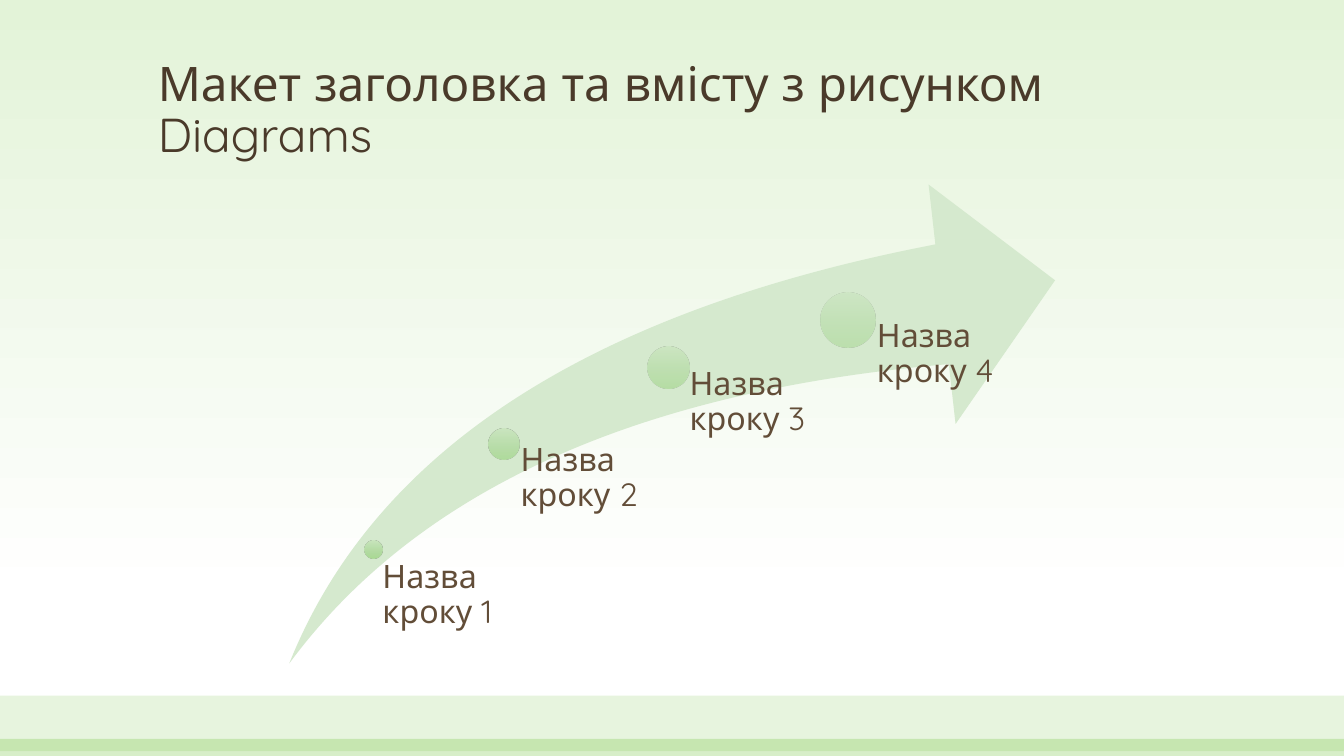
"""Builds a title slide body with a rising arrow that carries four steps."""
import pptx
import pptx.dml.color
import pptx.enum.shapes
import pptx.enum.text
import pptx.oxml.ns
import pptx.util
from dataclasses import dataclass
from lxml import etree

Cm = pptx.util.Cm
RGB = pptx.dml.color.RGBColor.from_string
PRESET = pptx.enum.shapes.MSO_SHAPE
ANCHOR = pptx.enum.text.MSO_ANCHOR
qn = pptx.oxml.ns.qn


@dataclass(frozen=True)
class Theme:
    font: str = "Quicksand"
    title_size: int = 34
    step_size: int = 23
    title_color: str = "4A3A2A"
    step_color: str = "624D38"
    arrow: str = "D5E9CE"
    band: str = "72C23C"
    sky: tuple = ((0, "E3F3D8", 56), (79, "FFFFFF", 100))
    dot: tuple = ((0, "C8E5BC"), (50, "B3DBA2"), (100, "A4D78D"))


theme = Theme()


def paint_gradient(owner, fill, stops):
    fill.gradient()
    fill.gradient_angle = 270
    stop_list = owner.element.find(".//" + qn("a:gsLst"))
    for old_stop in list(stop_list):
        stop_list.remove(old_stop)
    for position, color, opacity in stops:
        stop = etree.SubElement(stop_list, qn("a:gs"), pos=str(position * 1000))
        tint = etree.SubElement(stop, qn("a:srgbClr"), val=color)
        etree.SubElement(tint, qn("a:alpha"), val=str(opacity * 1000))


def add_text(text, *, left, top, width, height, size, color,
             insets=(0, 0, 0, 0), anchor=ANCHOR.TOP):
    frame = slide.shapes.add_textbox(Cm(left), Cm(top), Cm(width), Cm(height)).text_frame
    frame.word_wrap = True
    frame.vertical_anchor = anchor
    frame.margin_left, frame.margin_top, frame.margin_right, frame.margin_bottom = map(Cm, insets)
    paragraph = frame.paragraphs[0]
    paragraph.line_spacing = 0.9
    run = paragraph.add_run()
    run.text = text
    run.font.name = theme.font
    run.font.size = pptx.util.Pt(size)
    run.font.color.rgb = RGB(color)


deck = pptx.Presentation()
deck.slide_width, deck.slide_height = Cm(33.87), Cm(19.05)
slide = deck.slides.add_slide(deck.slide_layouts[6])
paint_gradient(slide, slide.background.fill, theme.sky)

for top, height, opacity in ((17.53, 1.4, 17), (18.62, 0.43, 28)):
    band = slide.shapes.add_shape(PRESET.RECTANGLE, 0, Cm(top), deck.slide_width, Cm(height))
    band.shadow.inherit = False
    band.line.fill.background()
    band.fill.solid()
    band.fill.fore_color.rgb = RGB(theme.band)
    band_color = band.element.spPr.find(qn("a:solidFill"))[0]
    etree.SubElement(band_color, qn("a:alpha"), val=str(opacity * 1000))

add_text("Макет заголовка та вмісту з рисунком Diagrams",
         left=3.73, top=1.22, width=26.42, height=3.02,
         size=theme.title_size, color=theme.title_color,
         insets=(0.25, 0.13, 0.25, 0.13), anchor=ANCHOR.BOTTOM)

arrow = slide.shapes.add_shape(PRESET.SWOOSH_ARROW, Cm(7.29), Cm(4.65), Cm(19.3), Cm(12.07))
arrow.adjustments[0] = 0.25
arrow.adjustments[1] = 0.25
arrow.shadow.inherit = False
arrow.line.fill.background()
arrow.fill.solid()
arrow.fill.fore_color.rgb = RGB(theme.arrow)

steps = (
    (9.41, 13.85, 0.44, 90, 14.14, 3.3, 0.23),
    (12.71, 11.19, 0.78, 77, 11.19, 4.06, 0.41),
    (16.85, 9.26, 1.04, 63, 9.26, 4.06, 0.53),
    (21.36, 8.06, 1.38, 50, 8.06, 4.06, 0.74),
)
steps_bottom = 16.72
for number, (x, y, diameter, opacity, label_top, label_width, indent) in enumerate(steps, 1):
    dot = slide.shapes.add_shape(PRESET.OVAL, Cm(x - diameter / 2), Cm(y - diameter / 2),
                                 Cm(diameter), Cm(diameter))
    dot.shadow.inherit = False
    dot.line.fill.background()
    paint_gradient(dot, dot.fill, [(position, color, opacity) for position, color in theme.dot])
    add_text(f"Назва кроку {number}", left=x, top=label_top, width=label_width,
             height=steps_bottom - label_top, size=theme.step_size,
             color=theme.step_color, insets=(indent, 0, 0, 0))

deck.save("out.pptx")
